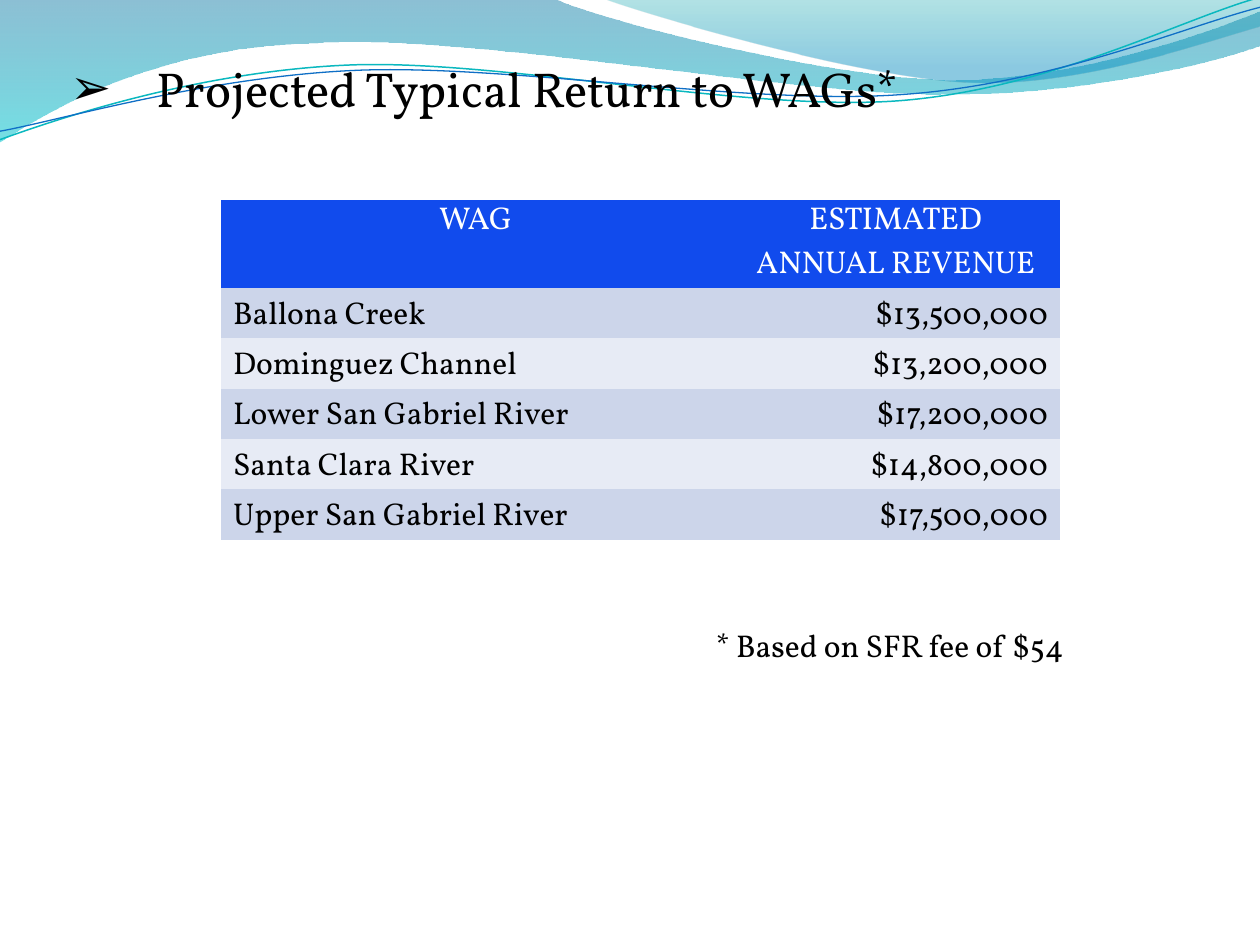
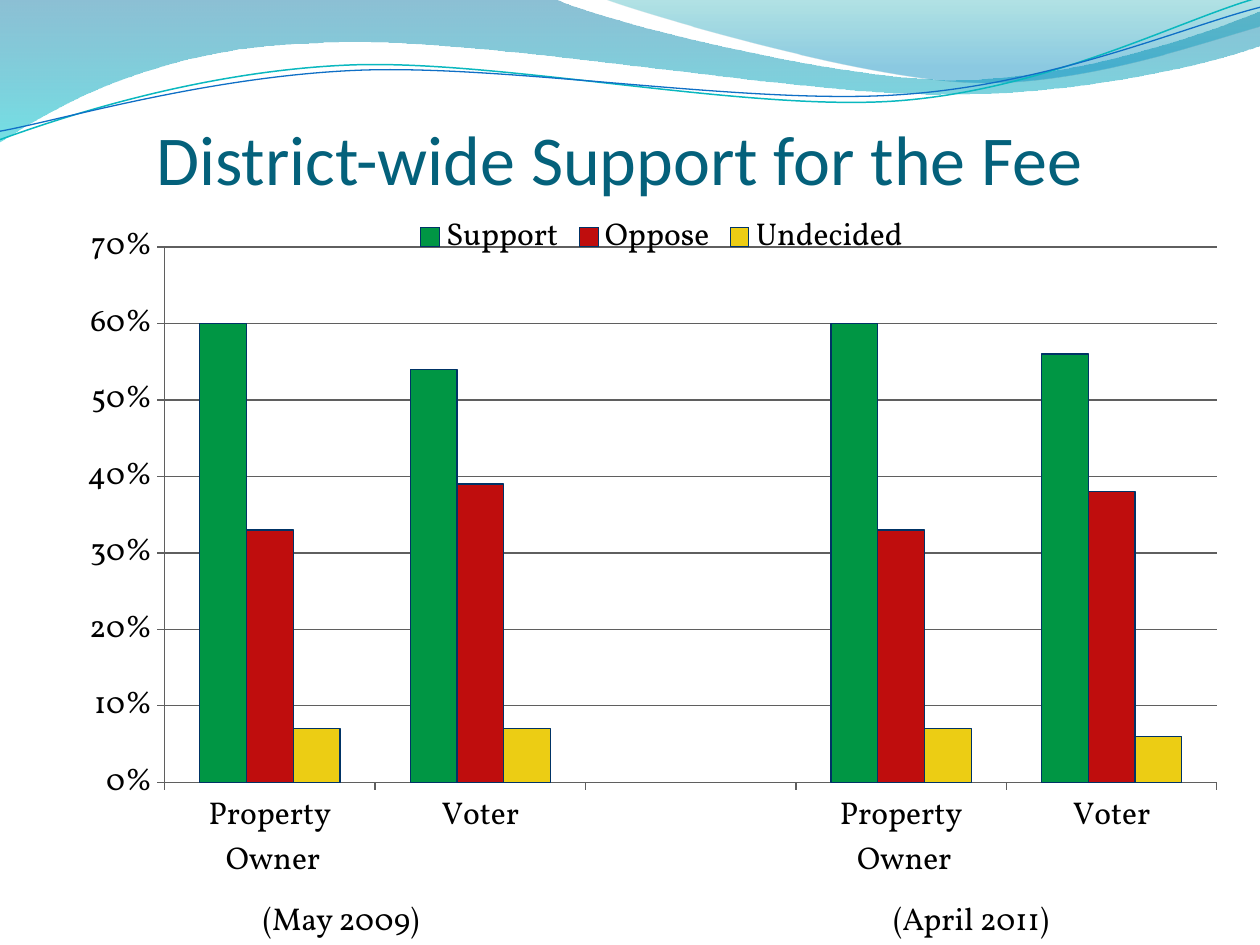
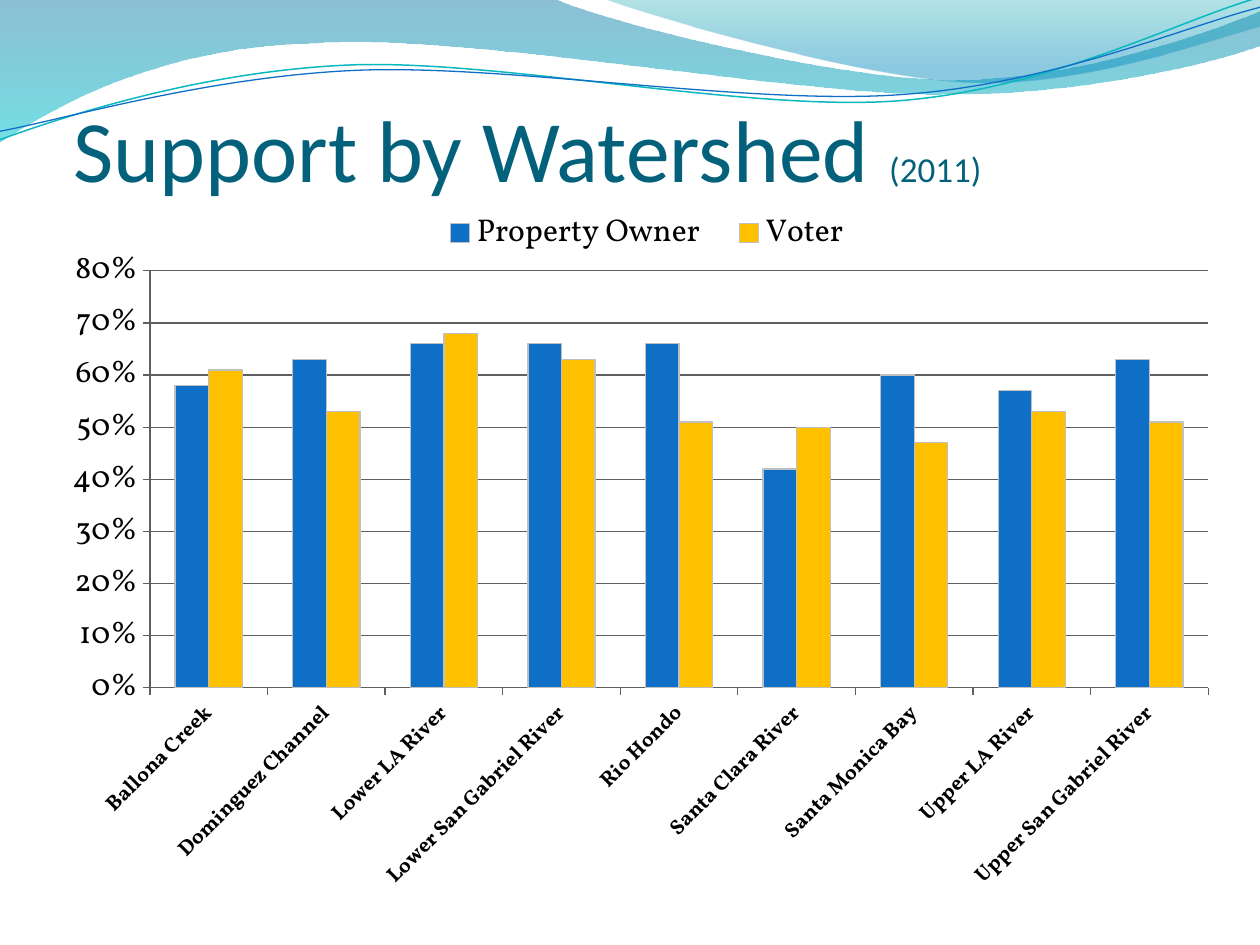
from lxml import etree
from pptx import Presentation
from pptx import util as u
from pptx.chart import data
from pptx.dml.color import RGBColor
from pptx.enum import chart as ce, text
from pptx.oxml import ns

PX = 7620  # 120 px to the inch
BODY, HEADING = "Vollkorn", "Calibri"
PLAIN_TABLE = "{2D5ABB26-0587-4C30-8999-92F81FD0307C}"
COLORS = {
    "ink": "000000", "title": "04617B", "white": "FFFFFF",
    "header": "114BED", "odd row": "CCD5EA", "even row": "E7EBF5",
    "axis": "5F5F5F", "navy edge": "003366", "grey edge": "C0C0C0",
    "support": "009644", "oppose": "BF0D0D", "undecided": "ECCD14",
    "owner": "0F6FC6", "voter": "FFC000",
    "wave top": "0074A1", "wave foot": "00C6CF",
    "crest top": "00A1A9", "crest foot": "008BBF",
    "teal line": "0AB8BF", "blue line": "0F6FC6",
}
# Outlines: a start point, then points (2 numbers) or Bezier curves (6 numbers).
WAVE = [(0, 0), (528, -1), (571, 20, 797, 76, 910, 76), (1024, 76, 1150, 31, 1200, 11),
        (1201, 43), (1180, 53, 1044, 91, 895, 90), (746, 90, 458, 34, 308, 41),
        (155, 43, 55, 100, -1, 136)]
CREST = [(575, -1), (611, 13, 818, 74, 923, 78), (1027, 83, 1153, 38, 1200, 25), (1200, 0)]
TEAL_LINE = [(0, 133), (58, 112, 190, 68, 332, 62), (474, 56, 712, 107, 856, 96),
             (1000, 85, 1126, 18, 1198, -2)]
BLUE_LINE = [(0, 125), (56, 115, 197, 73, 340, 67), (484, 61, 716, 101, 860, 90),
             (1003, 80, 1129, 25, 1200, 7)]


def px(*lengths):
    return [u.Emu(n * PX) for n in lengths]


def rgb(name):
    return RGBColor.from_string(COLORS[name])


def style(font, size, color="ink", name=BODY):
    font.size, font.name = u.Pt(size), name
    font.color.rgb = rgb(color)


def add_outline(slide, outline, close):
    """Build an outline through its end points, then bend the curved parts."""
    start, *ends = [px(*part[-2:]) for part in outline]
    builder = slide.shapes.build_freeform(*start, scale=1.0)
    builder.add_line_segments(ends, close=close)
    figure = builder.convert_to_shape()
    figure.shadow.inherit = False
    straights = list(figure._element.spPr.iter(ns.qn("a:lnTo")))
    for straight, part in zip(straights, outline[1:]):
        if len(part) == 6:
            bend = etree.Element(ns.qn("a:cubicBezTo"))
            for x, y in zip(px(*part[::2]), px(*part[1::2])):
                etree.SubElement(bend, ns.qn("a:pt"),
                                 x=str(x - figure.left), y=str(y - figure.top))
            straight.getparent().replace(straight, bend)
    return figure


def add_band(slide, outline, stops):
    """Fill an outline downwards; each stop is position, colour, opacity percent."""
    band = add_outline(slide, outline, True)
    band.line.fill.background()
    band.fill.gradient()
    band.fill.gradient_angle = 270
    for stop, (position, color, _) in zip(band.fill.gradient_stops, stops):
        stop.position = position
        stop.color.rgb = rgb(color)
    tints = band._element.spPr.iter(ns.qn("a:srgbClr"))
    for tint, (_, _, opacity) in zip(tints, stops):
        etree.SubElement(tint, ns.qn("a:alpha"), val=str(opacity * 1000))


def add_curve(slide, outline, color, width):
    curve = add_outline(slide, outline, False)
    curve.fill.background()
    curve.line.color.rgb = rgb(color)
    curve.line.width = u.Pt(width)


def new_slide(deck):
    """Add a blank slide with the waves along its top."""
    slide = deck.slides.add_slide(deck.slide_layouts[6])
    add_band(slide, WAVE, [(0, "wave top", 45), (1, "wave foot", 55)])
    add_band(slide, CREST, [(0, "crest top", 30), (0.8, "crest foot", 45)])
    add_curve(slide, TEAL_LINE, "teal line", 0.85)
    add_curve(slide, BLUE_LINE, "blue line", 0.75)
    return slide


def add_text(slide, box, words, size=18, align=text.PP_ALIGN.LEFT):
    frame = slide.shapes.add_textbox(*px(*box)).text_frame
    frame.word_wrap = True
    frame.text = words
    line = frame.paragraphs[0]
    line.alignment = align
    style(line.runs[0].font, size)
    return frame


def add_title(slide, left, words, size, align=text.PP_ALIGN.LEFT):
    frame = add_text(slide, (left, 40, 1080, 150), words, size, align)
    frame.vertical_anchor = text.MSO_ANCHOR.BOTTOM
    frame.margin_left = frame.margin_right = frame.margin_bottom = 0
    title = frame.paragraphs[0]
    style(title.runs[0].font, size, "title", HEADING)
    return title


def add_bullet(line, mark, left, hanging):
    properties = line._p.get_or_add_pPr()
    properties.set("marL", str(left * PX))
    properties.set("indent", str(-hanging * PX))
    etree.SubElement(properties, ns.qn("a:buFont"), typeface=HEADING)
    etree.SubElement(properties, ns.qn("a:buChar"), char=mark)


def add_revenue_table(slide, rows):
    widths, heights = (486, 314), [84] + [48] * (len(rows) - 1)
    frame = slide.shapes.add_table(len(rows), 2, *px(210, 190, sum(widths), sum(heights)))
    table = frame.table
    table._tbl.tblPr.find(ns.qn("a:tableStyleId")).text = PLAIN_TABLE
    for column, width in zip(table.columns, px(*widths)):
        column.width = width
    for r, (words, height) in enumerate(zip(rows, px(*heights))):
        table.rows[r].height = height
        fill = "header" if r == 0 else "odd row" if r % 2 else "even row"
        body_aligns = (text.PP_ALIGN.LEFT, text.PP_ALIGN.RIGHT)
        for c, word in enumerate(words):
            cell = table.cell(r, c)
            cell.margin_top, cell.margin_bottom = px(6 if r else 0, 0)
            cell.fill.solid()
            cell.fill.fore_color.rgb = rgb(fill)
            cell.text_frame.text = word
            line = cell.text_frame.paragraphs[0]
            line.alignment = body_aligns[c] if r else text.PP_ALIGN.CENTER
            style(line.runs[0].font, 18, "ink" if r else "white")


def place(part, fractions, index, target=()):
    """Fix a chart part at x, y, w, h fractions of the chart."""
    for old in part.findall(ns.qn("c:layout")):
        part.remove(old)
    layout = etree.Element(ns.qn("c:layout"))
    part.insert(index, layout)
    manual = etree.SubElement(layout, ns.qn("c:manualLayout"))
    modes = [("xMode", "edge"), ("yMode", "edge")]
    for tag, value in [*target, *modes, *zip("xywh", fractions)]:
        etree.SubElement(manual, ns.qn("c:" + tag), val=str(value))


def add_percent_chart(slide, box, plot_box, categories, series, edge, top):
    """Add clustered columns; each series is name, colour, values."""
    numbers = data.CategoryChartData(number_format="0%")
    numbers.categories = categories
    for name, _, values in series:
        numbers.add_series(name, values)
    chart = slide.shapes.add_chart(ce.XL_CHART_TYPE.COLUMN_CLUSTERED, *px(*box), numbers).chart
    style(chart.font, 18)
    chart.has_title = False
    chart.has_legend = True
    chart.legend.position = ce.XL_LEGEND_POSITION.TOP
    chart.legend.include_in_layout = False
    place(chart._chartSpace.chart.plotArea, plot_box, 0, [("layoutTarget", "inner")])

    plot = chart.plots[0]
    plot.vary_by_categories = False
    plot.gap_width, plot.overlap = 150, 0
    for columns, (_, color, _) in zip(plot.series, series):
        columns.format.fill.solid()
        columns.format.fill.fore_color.rgb = rgb(color)
        columns.format.line.color.rgb = rgb(edge)
        columns.format.line.width = u.Pt(0.75)

    scale = chart.value_axis
    scale.minimum_scale, scale.maximum_scale, scale.major_unit = 0, top, 0.1
    scale.has_major_gridlines = True
    scale.tick_labels.number_format = "0%"
    scale.tick_labels.number_format_is_linked = False
    for axis in (scale, chart.category_axis):
        axis.major_tick_mark = ce.XL_TICK_MARK.OUTSIDE
    for rule in (scale, chart.category_axis, scale.major_gridlines):
        rule.format.line.color.rgb = rgb("axis")
        rule.format.line.width = u.Pt(0.75)
    return chart


def tilt_categories(chart, degrees, size):
    axis = chart.category_axis
    style(axis.tick_labels.font, size)
    axis.tick_labels.font.bold = True
    axis._element.txPr.bodyPr.set("rot", str(degrees * 60000))


def revenue_slide(deck):
    slide = new_slide(deck)
    heading = add_text(slide, (40, 50, 1050, 68), "Projected Typical Return to WAGs*", 28)
    add_bullet(heading.paragraphs[0], "➢", 97, 82)
    add_revenue_table(slide, [
        ("WAG", "ESTIMATED ANNUAL REVENUE"),
        ("Ballona Creek", "$13,500,000"),
        ("Dominguez Channel", "$13,200,000"),
        ("Lower San Gabriel River", "$17,200,000"),
        ("Santa Clara River", "$14,800,000"),
        ("Upper San Gabriel River", "$17,500,000"),
    ])
    add_text(slide, (670, 590, 420, 48), "* Based on SFR fee of $54")


def district_slide(deck):
    slide = new_slide(deck)
    center = text.PP_ALIGN.CENTER
    add_title(slide, 50, "District-wide Support for the Fee", 40, center)
    groups = ["Property\n Owner", "Voter"]
    add_percent_chart(
        slide, (60, 190, 1140, 710), (0.085, 0.064, 0.879, 0.718), groups + [""] + groups,
        [("Support", "support", (0.6, 0.54, None, 0.6, 0.56)),
         ("Oppose", "oppose", (0.33, 0.39, None, 0.33, 0.38)),
         ("Undecided", "undecided", (0.07, 0.07, None, 0.07, 0.06))],
        edge="navy edge", top=0.7)
    for left, survey in ((210, "(May 2009)"), (810, "(April 2011)")):
        add_text(slide, (left, 850, 230, 50), survey, align=center)


def watershed_slide(deck):
    slide = new_slide(deck)
    title = add_title(slide, 70, "Support by Watershed ", 50)
    year = title.add_run()
    year.text = "(2011)"
    style(year.font, 20, "title", HEADING)
    watersheds = ["Ballona Creek", "Dominguez Channel", "Lower LA River",
                  "Lower San Gabriel River", "Rio Hondo", "Santa Clara River",
                  "Santa Monica Bay", "Upper LA River", "Upper San Gabriel River"]
    chart = add_percent_chart(
        slide, (40, 190, 1130, 680), (0.091, 0.1, 0.892, 0.584), watersheds,
        [("Property Owner", "owner", (0.58, 0.63, 0.66, 0.66, 0.66, 0.42, 0.6, 0.57, 0.63)),
         ("Voter", "voter", (0.61, 0.53, 0.68, 0.63, 0.51, 0.5, 0.47, 0.53, 0.51))],
        edge="grey edge", top=0.8)
    chart.legend.include_in_layout = True
    place(chart.legend._element, (0.32, 0.016, 0.38, 0.06), 1)
    tilt_categories(chart, -45, 12)


def main():
    deck = Presentation()
    deck.slide_width, deck.slide_height = px(1200, 900)
    revenue_slide(deck)
    district_slide(deck)
    watershed_slide(deck)
    deck.save("out.pptx")


if __name__ == "__main__":
    main()
